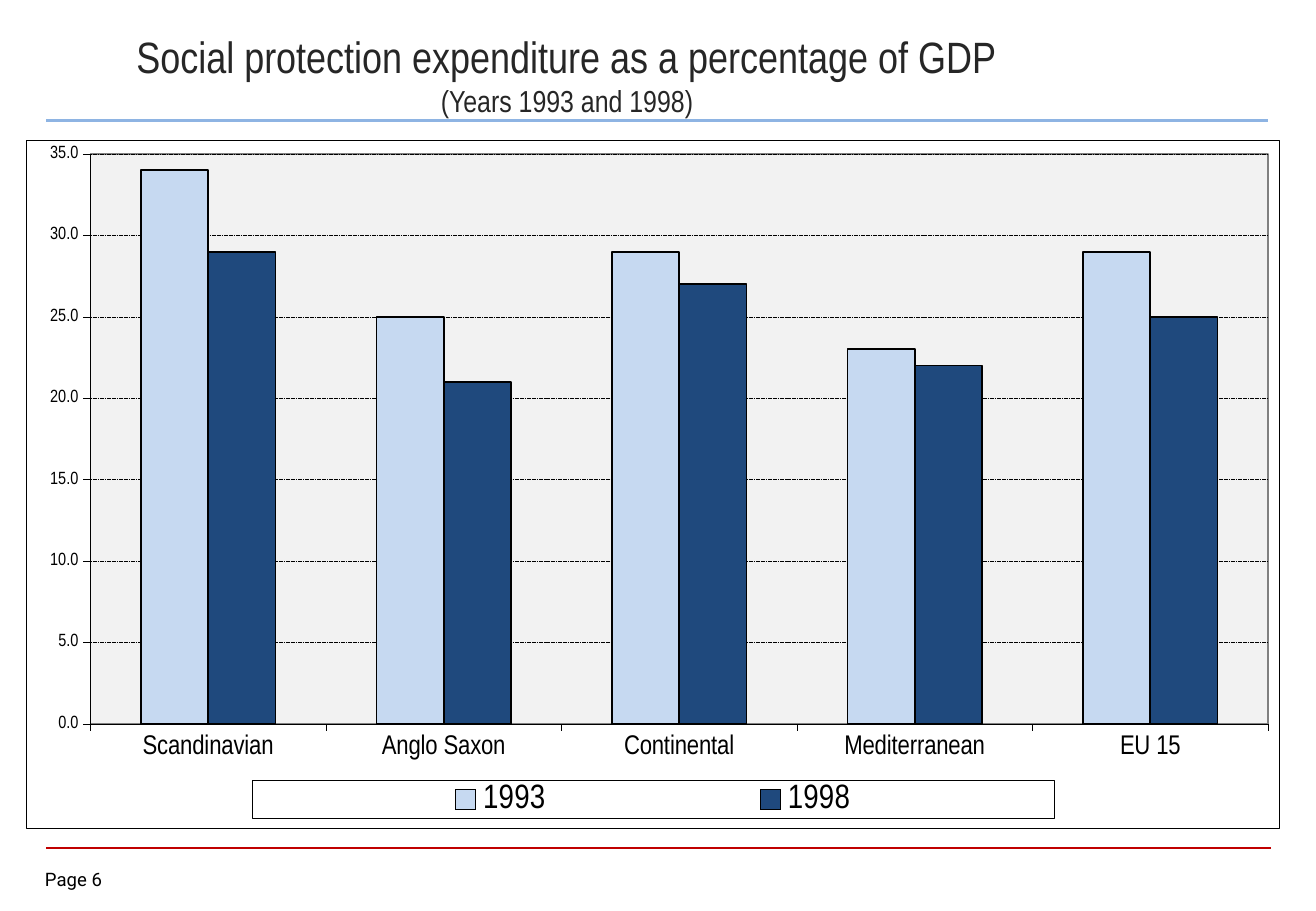
import dataclasses
import typing

import lxml.etree
import pptx
import pptx.chart.data
import pptx.dml.color
import pptx.enum.chart
import pptx.enum.dml
import pptx.enum.text
import pptx.oxml
import pptx.oxml.ns
import pptx.util

Cm = pptx.util.Cm
Pt = pptx.util.Pt
qn = pptx.oxml.ns.qn
NARROW = "Arial Narrow"
BLACK = "000000"


@dataclasses.dataclass
class Rule:
    top: float
    right: float
    color: str
    width: float


@dataclasses.dataclass
class Bars:
    name: str
    values: tuple[float, ...]
    color: str


RULES = [Rule(17.73, 26.56, "C00000", 1), Rule(2.52, 26.51, "8EB4E3", 1.5)]
CATEGORIES = ["Scandinavian", "Anglo Saxon", "Continental", "Mediterranean", "EU 15"]
YEARS = [
    Bars("1993", (34, 25, 29, 23, 29), "C6D9F1"),
    Bars("1998", (29, 21, 27, 22, 25), "1F497D"),
]
TITLE = [("Social protection expenditure as a percentage of GDP", 26), ("(Years 1993 and 1998)", 18)]


def rgb(color: str) -> pptx.dml.color.RGBColor:
    return pptx.dml.color.RGBColor.from_string(color)


def apply(obj: typing.Any, values: dict[str, typing.Any]) -> None:
    for name, value in values.items():
        setattr(obj, name, value)


def set_font(font: typing.Any, name: str, size: float, color: str = BLACK) -> None:
    apply(font, {"name": name, "size": Pt(size), "bold": False})
    font.color.rgb = rgb(color)


def set_line(line: typing.Any, color: str, width: float) -> None:
    line.color.rgb = rgb(color)
    line.width = Pt(width)


def chart_xml(body: str) -> lxml.etree._Element:
    ns = pptx.oxml.ns.nsdecls("c", "a")
    tag, rest = body.split(">", 1)
    return pptx.oxml.parse_xml(f"{tag} {ns}>{rest}")


def box_format(fill: str, line: str, width: float) -> lxml.etree._Element:
    return chart_xml(
        f'<c:spPr><a:solidFill><a:srgbClr val="{fill}"/></a:solidFill>'
        f'<a:ln w="{Pt(width)}"><a:solidFill><a:srgbClr val="{line}"/></a:solidFill></a:ln></c:spPr>'
    )


def place(parent: typing.Any, index: int, target: str, box: tuple[float, ...]) -> None:
    for old in parent.findall(qn("c:layout")):
        parent.remove(old)
    modes = '<c:xMode val="edge"/><c:yMode val="edge"/>'
    sizes = "".join(f'<c:{k} val="{v}"/>' for k, v in zip("xywh", box))
    parent.insert(index, chart_xml(
        f"<c:layout><c:manualLayout>{target}{modes}{sizes}</c:manualLayout></c:layout>"))


def add_rule(slide: typing.Any, rule: Rule) -> None:
    cxn = slide.shapes.add_connector(1, Cm(0.97), Cm(rule.top), Cm(rule.right), Cm(rule.top))
    set_line(cxn.line, rule.color, rule.width)
    lxml.etree.SubElement(cxn._element.spPr, qn("a:effectLst"))


def add_title(slide: typing.Any) -> None:
    sp = slide.shapes.title
    apply(sp, {"left": Cm(0.96), "top": Cm(0.54), "width": Cm(21.79), "height": Cm(2.03)})
    tf = sp.text_frame
    apply(tf, {
        "word_wrap": True,
        "auto_size": pptx.enum.text.MSO_AUTO_SIZE.NONE,
        "vertical_anchor": pptx.enum.text.MSO_ANCHOR.MIDDLE,
    })
    tf.text = "\n".join(text for text, _ in TITLE)
    for p, (_, size) in zip(tf.paragraphs, TITLE):
        p.alignment = pptx.enum.text.PP_ALIGN.CENTER
        set_font(p.runs[0].font, NARROW, size, "262626")


def add_page_number(slide: typing.Any) -> None:
    tf = slide.shapes.add_textbox(Cm(0.94), Cm(18.16), Cm(1.85), Cm(0.56)).text_frame
    apply(tf, dict.fromkeys(("margin_left", "margin_top", "margin_right", "margin_bottom"), 0))
    tf.word_wrap = False
    r = tf.paragraphs[0].add_run()
    r.text = "Page 6"
    set_font(r.font, "Roboto", 11)


def add_chart(slide: typing.Any) -> None:
    data = pptx.chart.data.CategoryChartData(number_format="0.0")
    data.categories = CATEGORIES
    for year in YEARS:
        data.add_series(year.name, year.values)
    chart = slide.shapes.add_chart(
        pptx.enum.chart.XL_CHART_TYPE.COLUMN_CLUSTERED,
        Cm(0.55), Cm(2.93), Cm(26.2), Cm(14.4), data,
    ).chart
    apply(chart, {"has_title": False, "has_legend": True})
    set_font(chart.font, "Arial", 10)

    plot = chart.plots[0]
    apply(plot, {"gap_width": 150, "overlap": 0, "vary_by_categories": False})
    for series, year in zip(plot.series, YEARS):
        series.format.fill.solid()
        series.format.fill.fore_color.rgb = rgb(year.color)
        set_line(series.format.line, BLACK, 1)

    for axis, size in ((chart.category_axis, 16), (chart.value_axis, 10.5)):
        axis.major_tick_mark = pptx.enum.chart.XL_TICK_MARK.OUTSIDE
        set_line(axis.format.line, BLACK, 0.25)
        set_font(axis.tick_labels.font, NARROW, size)
    values = chart.value_axis
    apply(values, {"minimum_scale": 0, "maximum_scale": 35, "major_unit": 5})
    apply(values.tick_labels, {"number_format": "0.0", "number_format_is_linked": False})
    grid = values.major_gridlines.format.line
    set_line(grid, BLACK, 0.25)
    grid.dash_style = pptx.enum.dml.MSO_LINE.SQUARE_DOT

    legend = chart.legend
    apply(legend, {"position": pptx.enum.chart.XL_LEGEND_POSITION.BOTTOM, "include_in_layout": False})
    set_font(legend.font, NARROW, 20)
    place(legend._element, 1, "", (0.18, 0.93, 0.64, 0.055))
    legend._element.find(qn("c:txPr")).addprevious(box_format("FFFFFF", BLACK, 0.25))

    area = chart._chartSpace.find(f".//{qn('c:plotArea')}")
    place(area, 0, '<c:layoutTarget val="inner"/>', (0.051, 0.02, 0.94, 0.828))
    area.append(box_format("F2F2F2", "808080", 1))
    chart._chartSpace.find(qn("c:chart")).addnext(box_format("FFFFFF", BLACK, 0.25))


def main() -> None:
    prs = pptx.Presentation()
    apply(prs, {"slide_width": Cm(27.51), "slide_height": Cm(19.05)})
    slide = prs.slides.add_slide(prs.slide_layouts[5])
    for rule in RULES:
        add_rule(slide, rule)
    add_page_number(slide)
    add_title(slide)
    add_chart(slide)
    prs.save("out.pptx")


if __name__ == "__main__":
    main()
